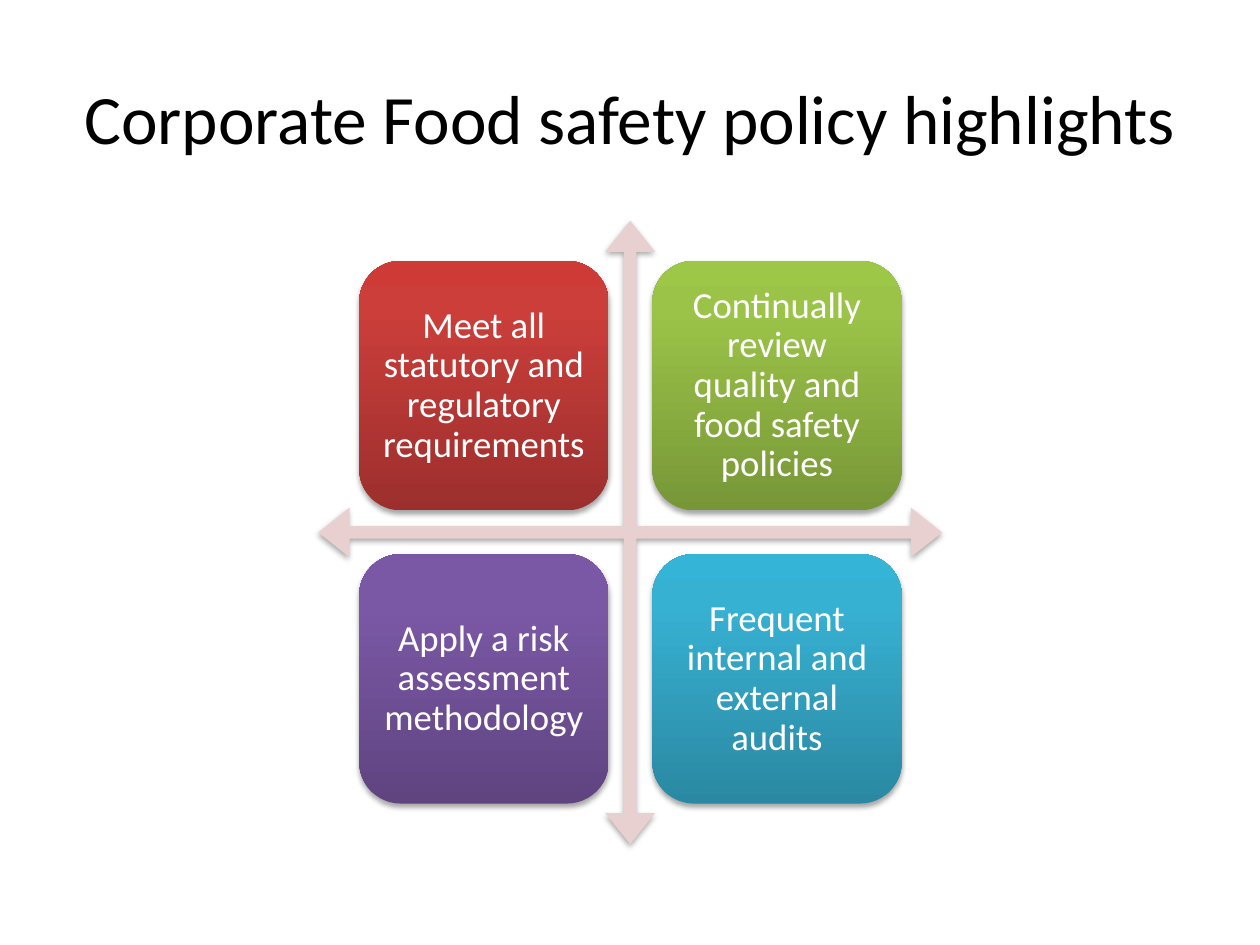
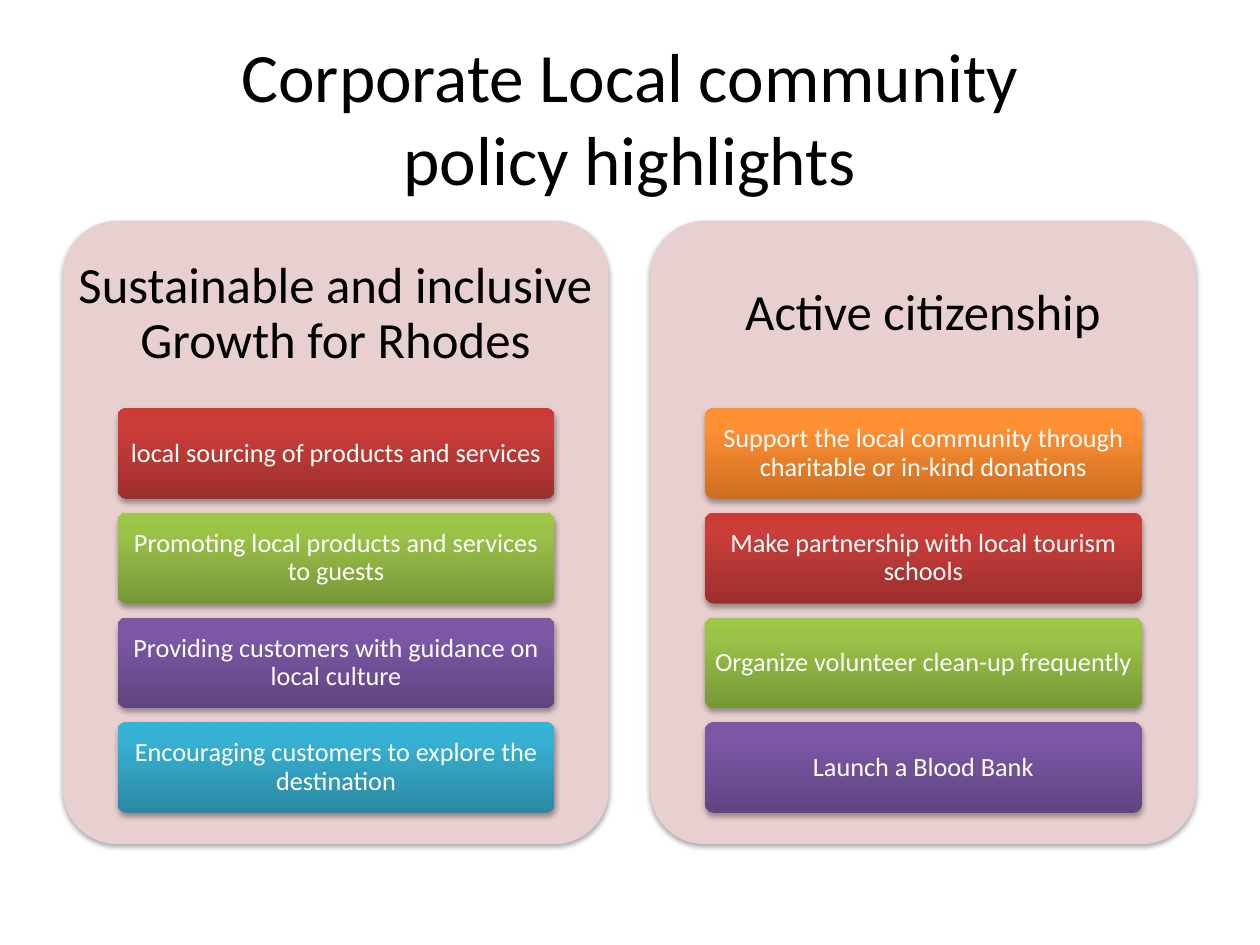
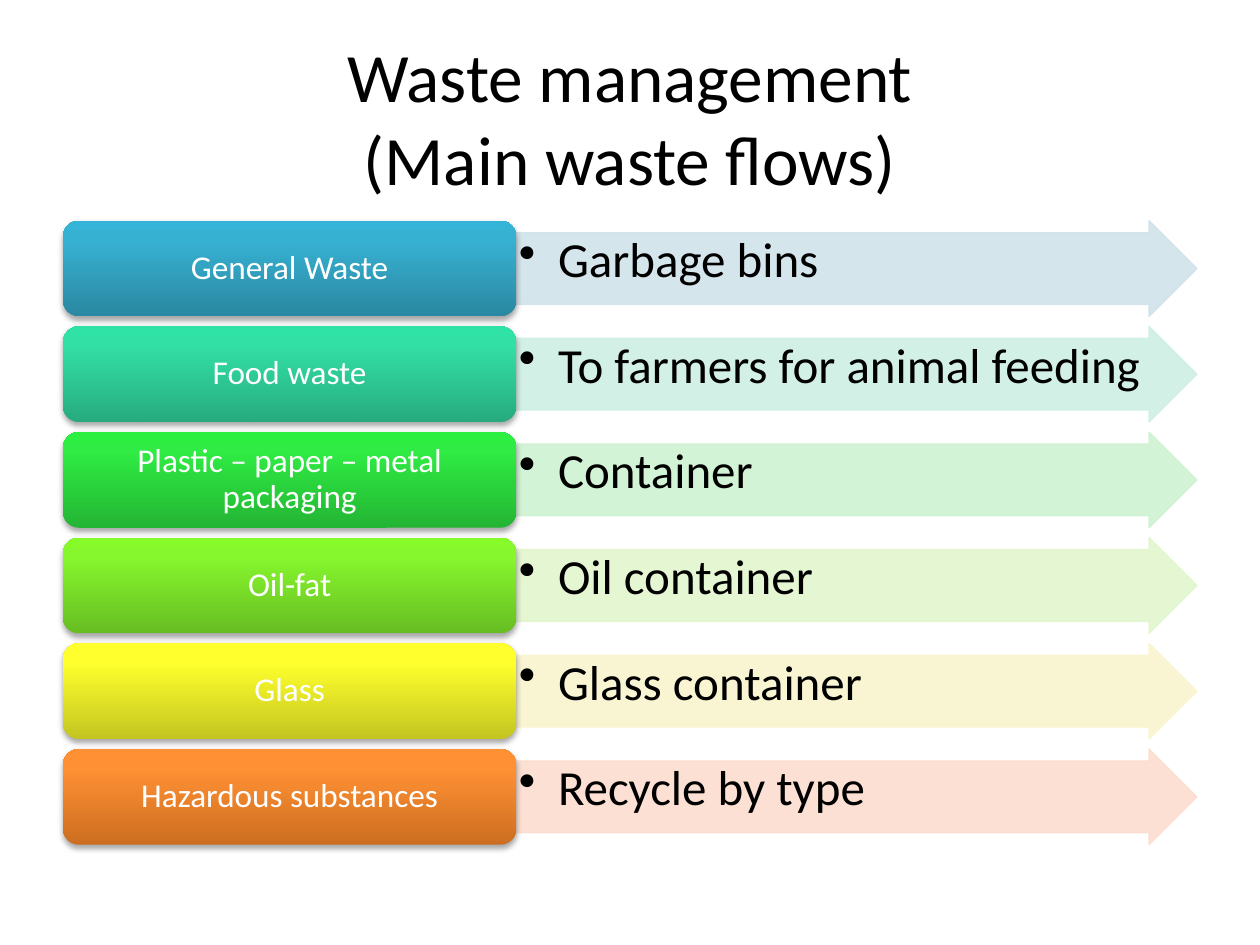
"""Build three slides on food safety, local community and waste management."""
from copy import deepcopy

from lxml.etree import SubElement
from pptx import Presentation
from pptx.dml.color import RGBColor
from pptx.enum.shapes import MSO_SHAPE as SHAPE
from pptx.enum.text import MSO_ANCHOR as ANCHOR, MSO_AUTO_SIZE as AUTO, PP_ALIGN as ALIGN
from pptx.oxml.ns import qn
from pptx.util import Cm, Pt

rgb = RGBColor.from_string
FONT, BLACK, WHITE, PINK = "Calibri", "000000", "FFFFFF", "E8D0D0"
LEFT, TOP, HEIGHT = 1.27, 4.45, 12.57
RED = ("9C2F2D", "CB3E3A", "CE3B37")
LIME = ("779737", "9BC348", "9DC746")
PURPLE = ("5F4480", "7B58A6", "7C57A8")
BLUE = ("2A88A2", "37B1D2", "34B4D6")
ORANGE = ("CC6E20", "FF9034", "FF9136")
TEAL = ("27AB7E", "32DFA4", "2FE3A6")
GREEN = ("24B534", "2FEB43", "2CEF41")
GRASS = ("67BD22", "86F62D", "86FB29")
YELLOW = ("C4C521", "FEFF2C", "FEFF2D")


def add_shape(s, kind, box, fill, adj=(), shadow=True):
    """Add a shape with a plain fill or a three-stop upward gradient."""
    sp = s.shapes.add_shape(kind, *map(Cm, box))
    for i, value in enumerate(adj):
        sp.adjustments[i] = value
    sp.line.fill.background()
    spPr = sp._element.spPr
    if isinstance(fill, str):
        sp.fill.solid()
        sp.fill.fore_color.rgb = rgb(fill)
    else:
        sp.fill.gradient()
        sp.fill.gradient_angle = 90
        stops = spPr.find(".//" + qn("a:gsLst"))
        stops.append(deepcopy(stops[0]))
        for stop, position, color in zip(sp.fill.gradient_stops, (0, 0.8, 1), fill):
            stop.position = position
            stop.color.rgb = rgb(color)
    sp.shadow.inherit = False
    if shadow:
        outer = SubElement(spPr.find(qn("a:effectLst")), qn("a:outerShdw"), blurRad="40000",
                           dist="23000", dir="5400000", rotWithShape="0")
        color = SubElement(outer, qn("a:srgbClr"), val=BLACK)
        SubElement(color, qn("a:alpha"), val="35000")
    return sp


def write(sp, text, size, color, inset, bullet=False):
    """Write one paragraph, centred or as a bullet at the top."""
    tf = sp.text_frame
    tf.word_wrap = True
    tf.margin_left = tf.margin_right = Cm(inset[0])
    tf.margin_top = tf.margin_bottom = Cm(inset[1])
    tf.vertical_anchor = ANCHOR.TOP if bullet else ANCHOR.MIDDLE
    p = tf.paragraphs[0]
    if bullet:
        pPr = p._p.get_or_add_pPr()
        pPr.set("marL", str(Cm(0.79)))
        pPr.set("indent", str(-Cm(0.79)))
        SubElement(pPr, qn("a:buChar"), char="•")
    p.alignment = ALIGN.LEFT if bullet else ALIGN.CENTER
    p.line_spacing = 0.9
    r = p.add_run()
    r.text = text
    r.font.name, r.font.size = FONT, Pt(size)
    r.font.color.rgb = rgb(color)


prs = Presentation()
prs.slide_width, prs.slide_height = Cm(25.4), Cm(19.05)

titles = [
    ["Corporate Food safety policy highlights"],
    ["Corporate Local community", "policy highlights"],
    ["Waste management", "(Main waste flows)"],
]
for lines in titles:
    s = prs.slides.add_slide(prs.slide_layouts[5])
    title = s.shapes.title
    title.left, title.top, title.width, title.height = map(Cm, (LEFT, 0.76, 22.86, 3.18))
    tf = title.text_frame
    tf.auto_size = AUTO.NONE
    tf.vertical_anchor = ANCHOR.MIDDLE
    p = tf.paragraphs[0]
    p.alignment = ALIGN.CENTER
    for i, line in enumerate(lines):
        if i:
            p.add_line_break()
        r = p.add_run()
        r.text = line
        r.font.name, r.font.size = FONT, Pt(39.6)
        r.font.color.rgb = rgb(BLACK)
food, community, waste = prs.slides

add_shape(food, SHAPE.QUAD_ARROW, (6.42, TOP, HEIGHT, HEIGHT), PINK, (0.02, 0.04, 0.05))
policies = [
    ("Meet all statutory and regulatory requirements", RED),
    ("Continually review quality and food safety policies", LIME),
    ("Apply a risk assessment methodology", PURPLE),
    ("Frequent internal and external audits", BLUE),
]
for i, (text, fill) in enumerate(policies):
    row, col = divmod(i, 2)
    tile = add_shape(food, SHAPE.ROUNDED_RECTANGLE,
                     (7.24 + 5.91 * col, 5.26 + 5.91 * row, 5.03, 5.03), fill)
    write(tile, text, 21, WHITE, (0.23, 0.23))

panels = [
    ("Sustainable and inclusive Growth for Rhodes", [
        ("local sourcing of products and services", RED),
        ("Promoting local products and services to guests", LIME),
        ("Providing customers with guidance on local culture", PURPLE),
        ("Encouraging customers to explore the destination", BLUE),
    ]),
    ("Active citizenship", [
        ("Support the local community through charitable or in-kind donations", ORANGE),
        ("Make partnership with local tourism schools", RED),
        ("Organize volunteer clean-up frequently", LIME),
        ("Launch a Blood Bank", PURPLE),
    ]),
]
for col, (heading, actions) in enumerate(panels):
    x = LEFT + 11.84 * col
    add_shape(community, SHAPE.ROUNDED_RECTANGLE, (x, TOP, 11, HEIGHT), PINK, [0.1])
    label = community.shapes.add_textbox(*map(Cm, (x, TOP, 11, 3.77)))
    write(label, heading, 29, BLACK, (0.25, 0.3))
    for row, (text, fill) in enumerate(actions):
        button = add_shape(community, SHAPE.ROUNDED_RECTANGLE,
                           (x + 1.1, 8.23 + 2.11 * row, 8.81, 1.83), fill, [0.1])
        write(button, text, 15, WHITE, (0.1, 0.08))

flows = [
    ("General Waste", BLUE, "Garbage bins", "D0E3EA"),
    ("Food waste", TEAL, "To farmers for animal feeding", "CFEFE5"),
    ("Plastic – paper – metal packaging", GREEN, "Container", "CFF2D2"),
    ("Oil-fat", GRASS, "Oil container", "E2F6CE"),
    ("Glass", YELLOW, "Glass container", "F9F5CF"),
    ("Hazardous substances", ORANGE, "Recycle by type", "FCDDCF"),
]
for row, (kind, fill, target, tint) in enumerate(flows):
    y = TOP + 2.13 * row
    arrow = add_shape(waste, SHAPE.RIGHT_ARROW, (10.41, y, 13.72, 1.93), tint,
                      (0.75, 0.5), shadow=False)
    arrow.line.color.rgb = rgb(tint)
    arrow.line.width = Pt(0.75)
    for color in arrow._element.spPr.iter(qn("a:srgbClr")):
        SubElement(color, qn("a:alpha"), val="90000")
    write(arrow, target, 28, BLACK, (0.05, 0.05), bullet=True)
    source = add_shape(waste, SHAPE.ROUNDED_RECTANGLE, (LEFT, y, 9.14, 1.93), fill)
    write(source, kind, 19, WHITE, (0.2, 0.1))

prs.save("out.pptx")
